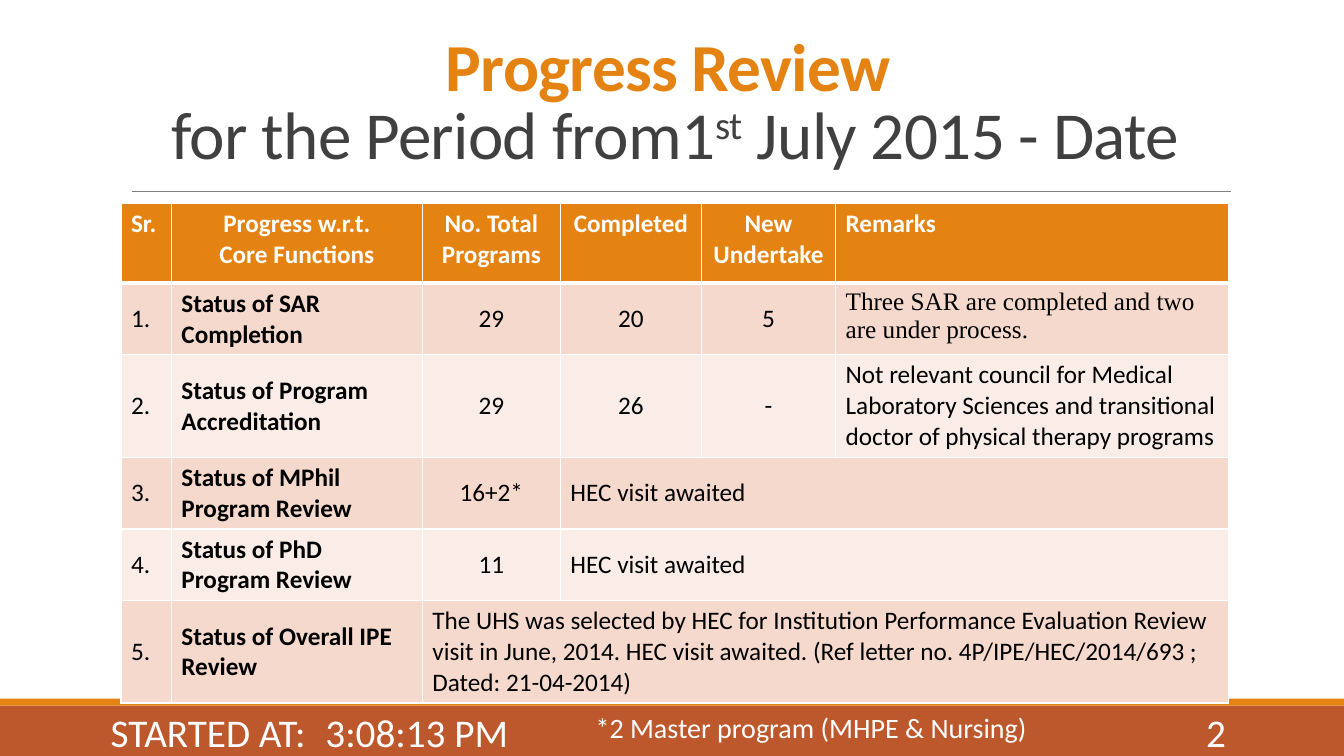
from dataclasses import dataclass

from lxml.etree import SubElement
from pptx import Presentation
from pptx.dml.color import RGBColor
from pptx.enum.shapes import MSO_CONNECTOR, MSO_SHAPE
from pptx.enum.text import MSO_ANCHOR, MSO_AUTO_SIZE, PP_ALIGN
from pptx.oxml.ns import qn
from pptx.util import Pt

ORANGE, RUST, WHITE, BLACK = "E48312", "BD582C", "FFFFFF", "000000"
DARK_GRAY, RULE_GRAY = "404040", "808080"
BAND_FILLS = ("F5D9CC", "FAEDE7")
LEFT, CENTER, RIGHT = PP_ALIGN.LEFT, PP_ALIGN.CENTER, PP_ALIGN.RIGHT


@dataclass
class Bar:
    top: float
    height: float
    color: str


@dataclass
class FooterText:
    text: str
    left: float
    top: float
    width: float
    size: float = 28
    align: PP_ALIGN = LEFT


@dataclass
class TableRow:
    height: float
    texts: tuple[str, ...]  # the last text spans the columns that are left


BARS = [Bar(504, 36, RUST), Bar(499, 5, ORANGE)]
FOOTERS = [
    FooterText("3:08:13 PM", 225.4, 508.3, 194.4),
    FooterText("2", 779.8, 508.3, 103, align=RIGHT),
    FooterText("STARTED AT:", 7.9, 508.3, 217.4, align=RIGHT),
    FooterText("*2 Master program (MHPE & Nursing)", 418.3, 505.4, 346.3, size=20),
]
COLUMN_WIDTHS = (36, 179.3, 98.6, 100.8, 95.8, 280.8)
HEADER_ALIGNS = (LEFT, CENTER, CENTER, CENTER, CENTER, LEFT)
TABLE_ROWS = [
    TableRow(56.9, ("Sr.", "Progress w.r.t.\nCore Functions", "No. Total Programs",
                    "Completed", "New Undertake", "Remarks")),
    TableRow(51.2, ("1.", "Status of SAR Completion", "29", "20", "5",
                    "Three SAR are completed and two are under process.")),
    TableRow(73, ("2.", "Status of Program Accreditation", "29", "26", "-",
                  "Not relevant council for Medical Laboratory Sciences and "
                  "transitional doctor of physical therapy programs")),
    TableRow(51.2, ("3.", "Status of MPhil Program Review", "16+2*", "HEC visit awaited")),
    TableRow(51.2, ("4.", "Status of PhD Program Review", "11", "HEC visit awaited")),
    TableRow(73, ("5.", "Status of Overall IPE Review",
                  "The UHS was selected by HEC for Institution Performance Evaluation "
                  "Review visit in June, 2014. HEC visit awaited. (Ref letter no. "
                  "4P/IPE/HEC/2014/693 ; Dated: 21-04-2014)")),
]


def rgb(color: str) -> RGBColor:
    return RGBColor.from_string(color)


def format_text(text_frame, size: float, color: str, align: PP_ALIGN,
                bold: bool = False, font_name: str = "Calibri") -> None:
    for paragraph in text_frame.paragraphs:
        paragraph.alignment = align
        for run in paragraph.runs:
            run.font.name, run.font.size, run.font.bold = font_name, Pt(size), bold
            run.font.color.rgb = rgb(color)


def draw_bar(slide, bar: Bar) -> None:
    shape = slide.shapes.add_shape(MSO_SHAPE.RECTANGLE, 0, Pt(bar.top), Pt(960), Pt(bar.height))
    shape.shadow.inherit = False
    shape.fill.solid()
    shape.fill.fore_color.rgb = rgb(bar.color)
    shape.line.fill.background()


def draw_rule(slide) -> None:
    rule = slide.shapes.add_connector(
        MSO_CONNECTOR.STRAIGHT, Pt(94.3), Pt(136.6), Pt(879), Pt(136.6))
    rule.line.color.rgb = rgb(RULE_GRAY)
    rule.line.width = Pt(0.5)
    SubElement(rule._element.spPr, qn("a:effectLst"))


def fill_title(title) -> None:
    title.left, title.top, title.width, title.height = Pt(86.4), Pt(13), Pt(792), Pt(114.5)
    text_frame = title.text_frame
    text_frame.auto_size = MSO_AUTO_SIZE.NONE
    text_frame.vertical_anchor = MSO_ANCHOR.BOTTOM
    paragraph = text_frame.paragraphs[0]
    paragraph.text = "Progress Review \vfor the Period from1"
    for text in ("st", " July 2015 - Date"):
        paragraph.add_run().text = text
    paragraph.line_spacing = 0.85
    format_text(text_frame, 48, DARK_GRAY, CENTER)
    heading, _, ordinal, _ = paragraph.runs
    heading.font.bold = True
    heading.font.color.rgb = rgb(ORANGE)
    for run in paragraph.runs:
        run.font._element.set("spc", "-50")
    ordinal.font._element.set("baseline", "30000")


def set_borders(cell, bottom_width: float) -> None:
    properties = cell._tc.get_or_add_tcPr()
    for side, width in (("L", 1), ("R", 1), ("T", 1), ("B", bottom_width)):
        line = SubElement(properties, qn(f"a:ln{side}"), w=str(Pt(width)))
        SubElement(SubElement(line, qn("a:solidFill")), qn("a:srgbClr"), val=WHITE)


def draw_table(slide, rows: list[TableRow]) -> None:
    table = slide.shapes.add_table(
        len(rows), len(COLUMN_WIDTHS), Pt(86.4), Pt(145.4),
        Pt(sum(COLUMN_WIDTHS)), Pt(sum(row.height for row in rows))).table
    table.horz_banding = False
    last_column = len(COLUMN_WIDTHS) - 1
    for column, width in zip(table.columns, COLUMN_WIDTHS):
        column.width = Pt(width)

    for row_index, row in enumerate(rows):
        is_header = row_index == 0
        table.rows[row_index].height = Pt(row.height)
        for cell in table.rows[row_index].cells:
            set_borders(cell, 3 if is_header else 1)
            cell.fill.solid()
            cell.fill.fore_color.rgb = rgb(ORANGE if is_header else BAND_FILLS[(row_index - 1) % 2])

        last_text = len(row.texts) - 1
        if last_text < last_column:
            table.cell(row_index, last_text).merge(table.cell(row_index, last_column))
        for column_index, text in enumerate(row.texts):
            cell = table.cell(row_index, column_index)
            cell.text_frame.text = text
            is_number = 2 <= column_index < last_text
            if is_header:
                format_text(cell.text_frame, 18, WHITE, HEADER_ALIGNS[column_index], bold=True)
            else:
                cell.vertical_anchor = MSO_ANCHOR.MIDDLE
                format_text(cell.text_frame, 18, BLACK, CENTER if is_number else LEFT,
                            bold=column_index == 1)

    # The first remark is set in a serif face at the top of its cell
    remark = table.cell(1, last_column)
    remark.vertical_anchor = MSO_ANCHOR.TOP
    format_text(remark.text_frame, 18, BLACK, LEFT, font_name="Times New Roman")


def draw_footer(slide, footer: FooterText) -> None:
    box = slide.shapes.add_textbox(Pt(footer.left), Pt(footer.top), Pt(footer.width), Pt(28.8))
    text_frame = box.text_frame
    text_frame.word_wrap = True
    text_frame.vertical_anchor = MSO_ANCHOR.MIDDLE
    text_frame.text = footer.text
    format_text(text_frame, footer.size, WHITE, footer.align)


def main() -> None:
    presentation = Presentation()
    presentation.slide_width, presentation.slide_height = Pt(960), Pt(540)
    slide = presentation.slides.add_slide(presentation.slide_layouts.get_by_name("Title Only"))

    # Background bars and title
    for bar in BARS:
        draw_bar(slide, bar)
    draw_rule(slide)
    fill_title(slide.shapes.title)

    # Progress table
    draw_table(slide, TABLE_ROWS)

    # Footer
    for footer in FOOTERS:
        draw_footer(slide, footer)

    presentation.save("out.pptx")


if __name__ == "__main__":
    main()
